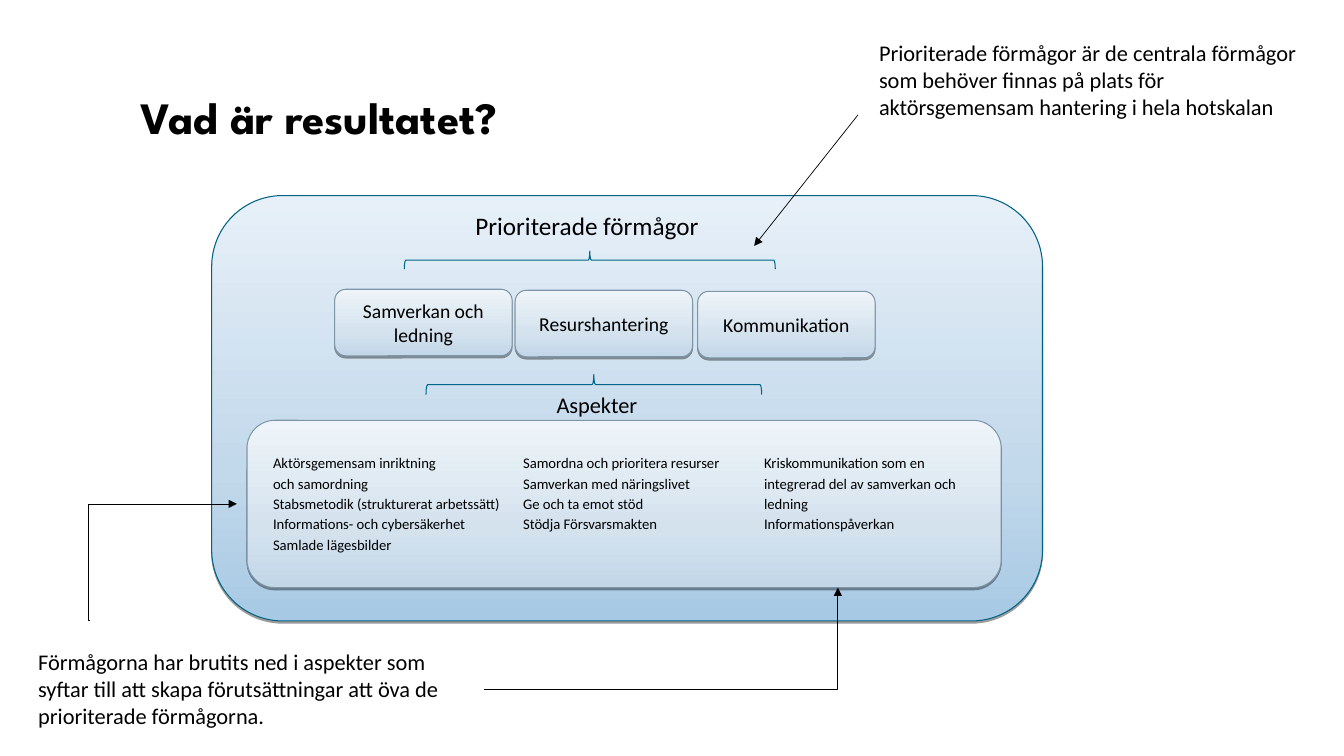
from dataclasses import dataclass

from lxml.etree import SubElement
from pptx import Presentation
from pptx.dml.color import RGBColor
from pptx.enum.shapes import MSO_CONNECTOR as CONN, MSO_SHAPE as SHAPE
from pptx.enum.text import MSO_ANCHOR as ANCHOR, PP_ALIGN as ALIGN
from pptx.oxml.ns import qn
from pptx.util import Inches, Pt

COLORS = {"text": "000000", "brace": "006688", "outer_line": "006283",
          "panel_line": "7D96A7", "shadow": "000000"}
OUTER_GRADIENT = {0: "A7C9E4", 35: "C2D8EB", 100: "E7F0F8"}
PANEL_GRADIENT = {0: "C2D7E8", 35: "D4E2EE", 100: "EEF4F9"}


@dataclass
class Panel:
    box: tuple[float, float, float, float]
    label: str = ""
    line: str = "panel_line"
    gradient: tuple = tuple(PANEL_GRADIENT.items())


@dataclass
class Text:
    box: tuple[float, float, float, float]
    lines: list[str]
    size: float = 16
    font: str = "Calibri"
    bold: bool = False
    align: ALIGN = ALIGN.LEFT
    spacing: object = None
    hang: float = 0


@dataclass
class Arrow:
    start: tuple[float, float]
    end: tuple[float, float]
    bend: float | None = None


PANELS = [
    Panel((2.1, 1.94, 8.24, 4.22), line="outer_line", gradient=tuple(OUTER_GRADIENT.items())),
    Panel((2.45, 4.17, 7.48, 1.66)),
    Panel((3.32, 2.87, 1.76, 0.66), "Samverkan och ledning"),
    Panel((5.11, 2.88, 1.76, 0.66), "Resurshantering"),
    Panel((6.92, 2.89, 1.76, 0.66), "Kommunikation"),
]
BRACES = [(5.79, 2.15, 0.2, 3.33), (5.76, 0.74, 0.18, 3.68)]
ASPECTS = [
    Text((2.61, 4.43, 2.57, 1.15), [
        "Aktörsgemensam inriktning", "och samordning", "Stabsmetodik (strukturerat arbetssätt)",
        "Informations- och cybersäkerhet", "Samlade lägesbilder"], hang=0.25),
    Text((5.09, 4.43, 2.26, 0.95), [
        "Samordna och prioritera resurser", "Samverkan med näringslivet",
        "Ge och ta emot stöd", "Stödja Försvarsmakten"], hang=0.25),
    Text((7.48, 4.43, 2.28, 0.95), [
        "Kriskommunikation som en integrerad del av samverkan och ledning",
        "Informationspåverkan"]),
]
TEXTS = [
    Text((1.3, 0.9, 9.38, 1.06), ["Vad är resultatet?"], 32, "League Spartan", True, spacing=0.9),
    Text((4.39, 2.04, 2.92, 0.48), ["Prioriterade förmågor "], 18, align=ALIGN.CENTER),
    Text((4.46, 3.83, 2.92, 0.33), ["Aspekter"], align=ALIGN.CENTER),
    Text((8.62, 0.34, 4.54, 0.91), [
        "Prioriterade förmågor är de centrala förmågor som behöver finnas på plats för "
        "aktörsgemensam hantering i hela hotskalan"]),
    Text((0.28, 6.38, 4.52, 0.91), [
        "Förmågorna har brutits ned i aspekter som syftar till att skapa förutsättningar "
        "att öva de prioriterade förmågorna."]),
]
ARROWS = [
    Arrow((8.51, 1.14), (7.48, 2.44)),
    Arrow((0.89, 6.16), (2.35, 5), bend=-0.01),
    Arrow((4.8, 6.84), (8.31, 5.83), bend=1),
]


def rgb(name: str) -> RGBColor:
    return RGBColor.from_string(COLORS[name])


def set_line(shape, color: str, width: float) -> None:
    shape.line.color.rgb = rgb(color)
    shape.line.width = Pt(width)


def add_run(p, text: str, size: float, font: str = "Calibri", bold: bool = False) -> None:
    r = p.add_run()
    r.text = text
    r.font.size, r.font.name, r.font.bold = Pt(size), font, bold
    r.font.color.rgb = rgb("text")


def set_gradient(sp, stops: tuple) -> None:
    """Fill from bottom to top with any number of stops."""
    sp.fill.gradient()
    sp.fill.gradient_angle = 90
    stop_list = sp._element.spPr.find(".//" + qn("a:gsLst"))
    for old in list(stop_list):
        stop_list.remove(old)
    for percent, color in stops:
        stop = SubElement(stop_list, qn("a:gs"), pos=str(percent * 1000))
        SubElement(stop, qn("a:srgbClr"), val=color)


def set_shadow(sp) -> None:
    """Cast a hard shadow straight down."""
    sp.shadow.inherit = False
    effects = sp._element.spPr.find(qn("a:effectLst"))
    shadow = SubElement(effects, qn("a:outerShdw"), blurRad="0", dist=str(Pt(1.6)),
                        dir="5400000", rotWithShape="0")
    color = SubElement(shadow, qn("a:srgbClr"), val=COLORS["shadow"])
    SubElement(color, qn("a:alpha"), val="38000")


def draw_panel(s, panel: Panel) -> None:
    sp = s.shapes.add_shape(SHAPE.ROUNDED_RECTANGLE, *map(Inches, panel.box))
    set_gradient(sp, panel.gradient)
    set_line(sp, panel.line, 0.75)
    set_shadow(sp)
    if panel.label:
        tf = sp.text_frame
        tf.word_wrap, tf.vertical_anchor = True, ANCHOR.MIDDLE
        p = tf.paragraphs[0]
        p.alignment = ALIGN.CENTER
        add_run(p, panel.label, 14)


def draw_brace(s, box: tuple[float, float, float, float]) -> None:
    sp = s.shapes.add_shape(SHAPE.RIGHT_BRACE, *map(Inches, box))
    sp.rotation = 270
    sp.shadow.inherit = False
    sp.fill.background()
    set_line(sp, "brace", 0.75)


def draw_text(s, text: Text) -> None:
    tf = s.shapes.add_textbox(*map(Inches, text.box)).text_frame
    tf.word_wrap = True
    for i, line in enumerate(text.lines):
        p = tf.add_paragraph() if i else tf.paragraphs[0]
        p.alignment = text.align
        p.line_spacing = text.spacing
        if text.hang:
            pPr = p._p.get_or_add_pPr()
            pPr.set("marL", str(Inches(text.hang)))
            pPr.set("indent", str(-Inches(text.hang)))
        add_run(p, line, text.size, text.font, text.bold)


def draw_arrow(s, arrow: Arrow) -> None:
    kind = CONN.STRAIGHT if arrow.bend is None else CONN.ELBOW
    c = s.shapes.add_connector(kind, *map(Inches, arrow.start + arrow.end))
    set_line(c, "text", 0.5)
    SubElement(c.line._get_or_add_ln(), qn("a:tailEnd"), type="triangle")
    spPr = c._element.spPr
    SubElement(spPr, qn("a:effectLst"))
    if arrow.bend is not None:
        guides = spPr.find(".//" + qn("a:avLst"))
        SubElement(guides, qn("a:gd"), name="adj1", fmla=f"val {round(arrow.bend * 100000)}")


def main() -> None:
    prs = Presentation()
    prs.slide_width, prs.slide_height = Inches(13.33), Inches(7.5)
    s = prs.slides.add_slide(prs.slide_layouts[6])
    for panel in PANELS:
        draw_panel(s, panel)
    for box in BRACES:
        draw_brace(s, box)
    for column in ASPECTS:
        column.size, column.spacing = 10.5, Pt(14.5)
        draw_text(s, column)
    for text in TEXTS:
        draw_text(s, text)
    for arrow in ARROWS:
        draw_arrow(s, arrow)
    prs.save("out.pptx")


if __name__ == "__main__":
    main()
